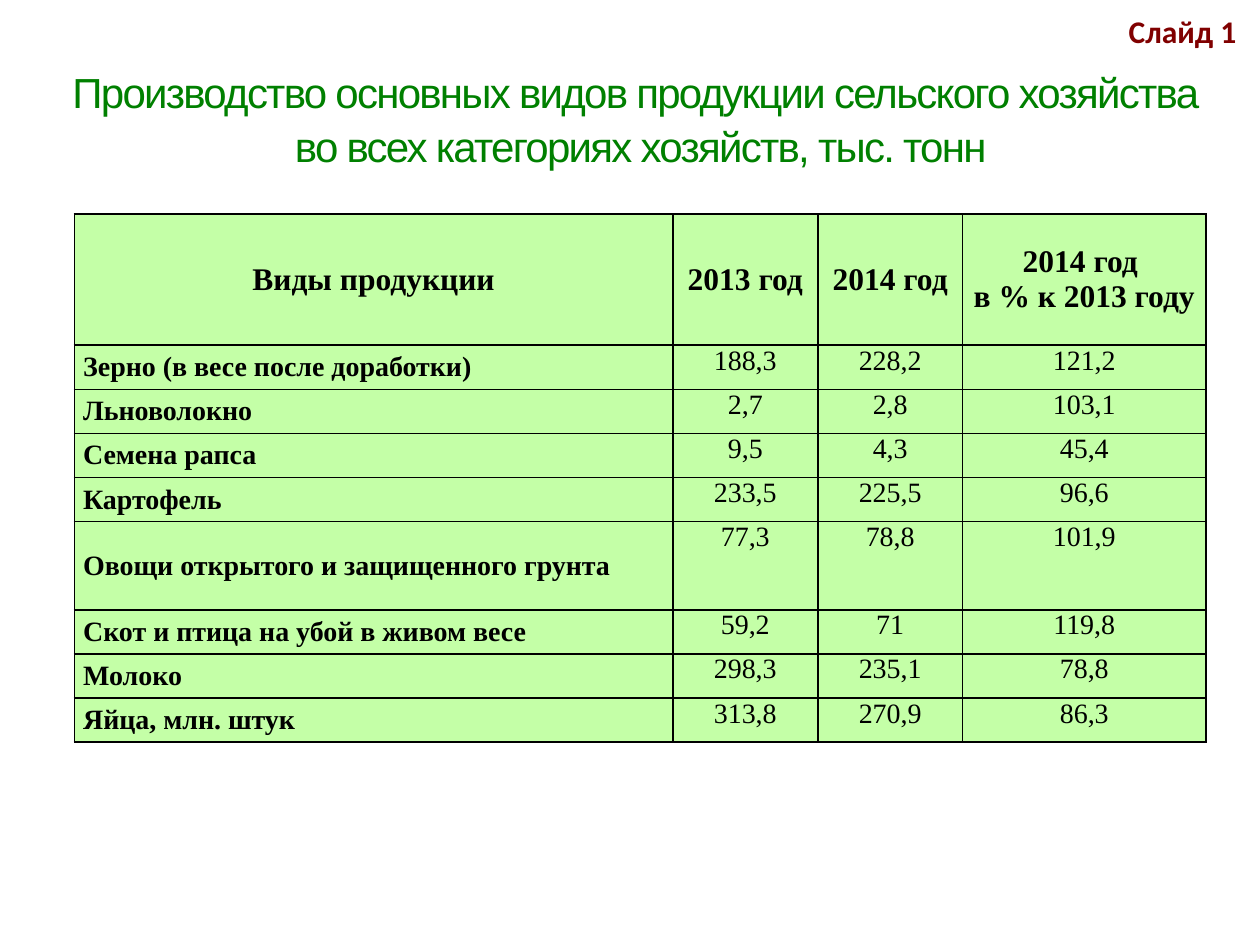
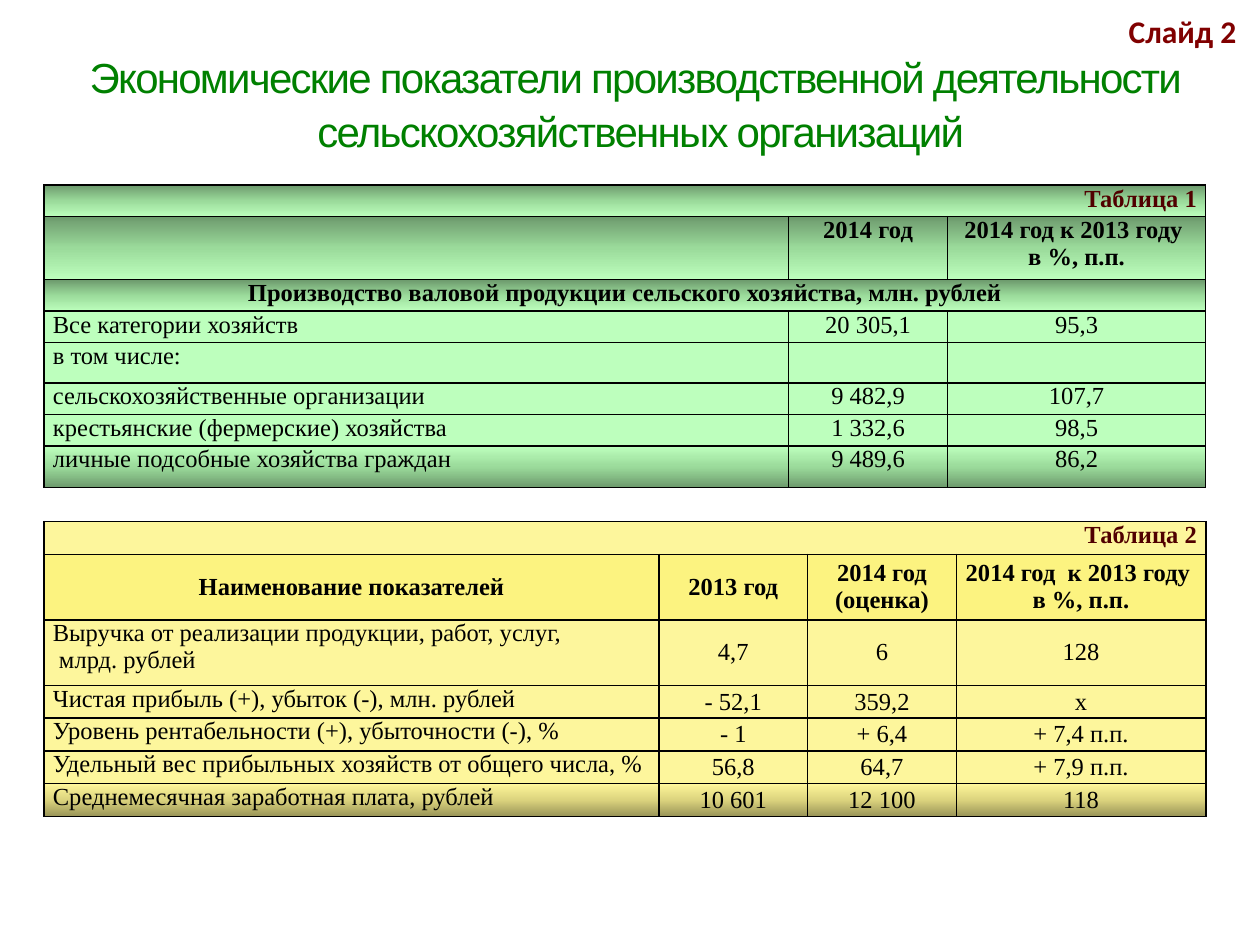
from dataclasses import dataclass, replace
from lxml import etree
from pptx import Presentation
from pptx.dml.color import RGBColor
from pptx.enum.text import MSO_ANCHOR as Anchor, MSO_AUTO_SIZE as Fit, PP_ALIGN as Align
from pptx.oxml.ns import qn
from pptx.util import Inches, Pt

# Shared colours and fonts
GREEN, MAROON, DARK, BLACK = "008000", "800000", "500000", "000000"
LIME, MINT, SAND, GOLD = "C4FFA7", "BDFFBD", "FDF69C", "FCF380"
LEAF = ("6D9A6D", "9BDB9B", "BDFFBD")
STRAW = ("9A9558", "DCD47E", "FFF79A")
SERIF = "Times New Roman"


@dataclass
class Look:
    """Format of one cell; fill is a hex colour or (three stops, angle)."""
    fill: object
    size: int = 14
    bold: bool = False
    color: str = BLACK
    align: object = Align.CENTER
    anchor: object = Anchor.TOP


def rgb(code):
    return RGBColor.from_string(code)


def style(font, color, **values):
    for key, value in values.items():
        setattr(font, key, value)
    font.color.rgb = rgb(color)


def shade(props, stops, angle):
    """Add a three-stop linear gradient to the cell properties."""
    grad = etree.SubElement(props, qn("a:gradFill"), rotWithShape="1")
    group = etree.SubElement(grad, qn("a:gsLst"))
    for pos, code in zip((0, 50000, 100000), stops):
        stop = etree.SubElement(group, qn("a:gs"), pos=str(pos))
        etree.SubElement(stop, qn("a:srgbClr"), val=code)
    etree.SubElement(grad, qn("a:lin"), ang=str(angle * 60000), scaled="0")


def border(props):
    """Draw a black 1 pt line on each side of the cell."""
    for i, side in enumerate("LRTB"):
        line = etree.Element(qn(f"a:ln{side}"), w=str(Pt(1)))
        solid = etree.SubElement(line, qn("a:solidFill"))
        etree.SubElement(solid, qn("a:srgbClr"), val=BLACK)
        props.insert(i, line)


def paint(cell, text, look):
    cell.text = text
    cell.vertical_anchor = look.anchor
    cell.margin_left = cell.margin_right = Inches(0.07)
    cell.margin_top = cell.margin_bottom = 0
    for para in cell.text_frame.paragraphs:
        para.alignment = look.align
        for run in para.runs:
            style(run.font, look.color, name=SERIF, size=Pt(look.size), bold=look.bold)
    props = cell._tc.get_or_add_tcPr()
    if isinstance(look.fill, str):
        cell.fill.solid()
        cell.fill.fore_color.rgb = rgb(look.fill)
    else:
        shade(props, *look.fill)
    border(props)


def grid(slide, left, top, cols, rows):
    """Each row is (height, look of first cell, look of the rest, texts)."""
    high = sum(row[0] for row in rows)
    frame = slide.shapes.add_table(len(rows), len(cols), Inches(left), Inches(top),
                                   Inches(sum(cols)), Inches(high))
    table = frame.table
    table.first_row = table.horz_banding = False
    for col, width in zip(table.columns, cols):
        col.width = Inches(width)
    for r, (height, first, rest, texts) in enumerate(rows):
        table.rows[r].height = Inches(height)
        for c in range(len(cols)):
            text = texts[c] if c < len(texts) else ""
            paint(table.cell(r, c), text, rest if c else first)
        if len(texts) == 1:
            table.cell(r, 0).merge(table.cell(r, len(cols) - 1))


def start(deck, number, top, lines):
    """Add a slide with its title and the number label."""
    slide = deck.slides.add_slide(deck.slide_layouts[5])
    title = slide.shapes.title
    title.left, title.top, title.width, title.height = map(Inches, (0.28, top, 9.61, 0.91))
    frame = title.text_frame
    frame.text = "\n".join(lines)
    frame.auto_size, frame.vertical_anchor = Fit.NONE, Anchor.TOP
    for i, para in enumerate(frame.paragraphs):
        para.alignment = Align.CENTER
        para.space_before = Pt(2 * i)
        font = para.runs[0].font
        style(font, GREEN, name="Arial", size=Pt(24))
        font._element.set("spc", "-100")

    label = slide.shapes.add_textbox(*map(Inches, (8.86, 0.05, 1.07, 0.4)))
    label.text_frame.word_wrap = False
    run = label.text_frame.paragraphs[0].add_run()
    run.text = f"Слайд {number}"
    style(run.font, MAROON, name="Calibri", size=Pt(18), bold=True)
    return slide


def output(deck):
    slide = start(deck, 1, 0.48, ["Производство основных видов продукции сельского хозяйства ",
                                  "во всех категориях хозяйств, тыс. тонн"])
    head = Look(LIME, 18, True, anchor=Anchor.MIDDLE)
    name = replace(head, size=16, align=Align.LEFT)
    value = Look(LIME, 16)
    data = [
        ("Зерно (в весе после доработки)", "188,3", "228,2", "121,2"),
        ("Льноволокно", "2,7", "2,8", "103,1"),
        ("Семена рапса", "9,5", "4,3", "45,4"),
        ("Картофель", "233,5", "225,5", "96,6"),
        ("Овощи открытого и защищенного грунта", "77,3", "78,8", "101,9"),
        ("Скот и птица на убой в живом весе", "59,2", "71", "119,8"),
        ("Молоко", "298,3", "235,1", "78,8"),
        ("Яйца, млн. штук", "313,8", "270,9", "86,3"),
    ]
    rows = [(1.04, head, head, ("Виды продукции", "2013 год", "2014 год",
                                "2014 год \nв % к 2013 году"))]
    rows += [(0.7 if i == 4 else 0.35, name, value, texts) for i, texts in enumerate(data)]
    grid(slide, 0.59, 1.7, (4.75, 1.15, 1.15, 1.93), rows)


def gross(slide, left, top):
    """Table 1: gross output."""
    head = Look((LEAF, 90), bold=True)
    tag = replace(head, color=DARK, align=Align.RIGHT)
    value = Look(MINT)
    name = replace(value, align=Align.LEFT)
    last = (LEAF, 270)
    grid(slide, left, top, (5.91, 1.26, 2.05), [
        (0.25, tag, tag, ("Таблица 1",)),
        (0.5, head, head, ("", "2014 год", "2014 год к 2013 году \nв %, п.п.")),
        (0.25, head, head, ("Производство валовой продукции сельского хозяйства, млн. рублей",)),
        (0.25, name, value, ("Все категории хозяйств", "20 305,1", "95,3")),
        (0.32, name, value, ("в том числе:", "", "")),
        (0.25, name, value, ("сельскохозяйственные организации", "9 482,9", "107,7")),
        (0.25, name, value, ("крестьянские (фермерские) хозяйства", "1 332,6", "98,5")),
        (0.33, replace(name, fill=last), replace(value, fill=last),
         ("личные подсобные хозяйства граждан", "9 489,6", "86,2")),
    ])


def profit(slide, left, top):
    """Table 2: revenue, profit and pay."""
    tag = Look(SAND, bold=True, color=DARK, align=Align.RIGHT)
    head = Look(GOLD, bold=True, anchor=Anchor.MIDDLE)
    name = Look(SAND, align=Align.LEFT)
    value = Look(SAND, anchor=Anchor.MIDDLE)
    last = (STRAW, 270)
    grid(slide, left, top, (4.88, 1.18, 1.18, 1.98), [
        (0.26, tag, tag, ("Таблица 2",)),
        (0.52, head, head, ("Наименование показателей", "2013 год", "2014 год\n(оценка)",
                            "2014 год  к 2013 году \nв %, п.п.")),
        (0.52, name, value, ("Выручка от реализации продукции, работ, услуг,\n млрд. рублей",
                             "4,7", "6", "128")),
        (0.26, name, value, ("Чистая прибыль (+), убыток (-), млн. рублей",
                             "- 52,1", "359,2", "х")),
        (0.26, name, value, ("Уровень рентабельности (+), убыточности (-), %",
                             "- 1", "+ 6,4", "+ 7,4 п.п.")),
        (0.26, name, value, ("Удельный вес прибыльных хозяйств от общего числа, %",
                             "56,8", "64,7", "+ 7,9 п.п.")),
        (0.26, replace(name, fill=last), replace(value, fill=last),
         ("Среднемесячная заработная плата, рублей", "10 601", "12 100", "118")),
    ])


def economy(deck):
    slide = start(deck, 2, 0.36, ["Экономические показатели производственной деятельности ",
                                  "сельскохозяйственных организаций"])
    gross(slide, 0.35, 1.47)
    profit(slide, 0.35, 4.14)


def main():
    deck = Presentation()
    deck.slide_width, deck.slide_height = Inches(10), Inches(7.5)
    output(deck)
    economy(deck)
    deck.save("out.pptx")


if __name__ == "__main__":
    main()
